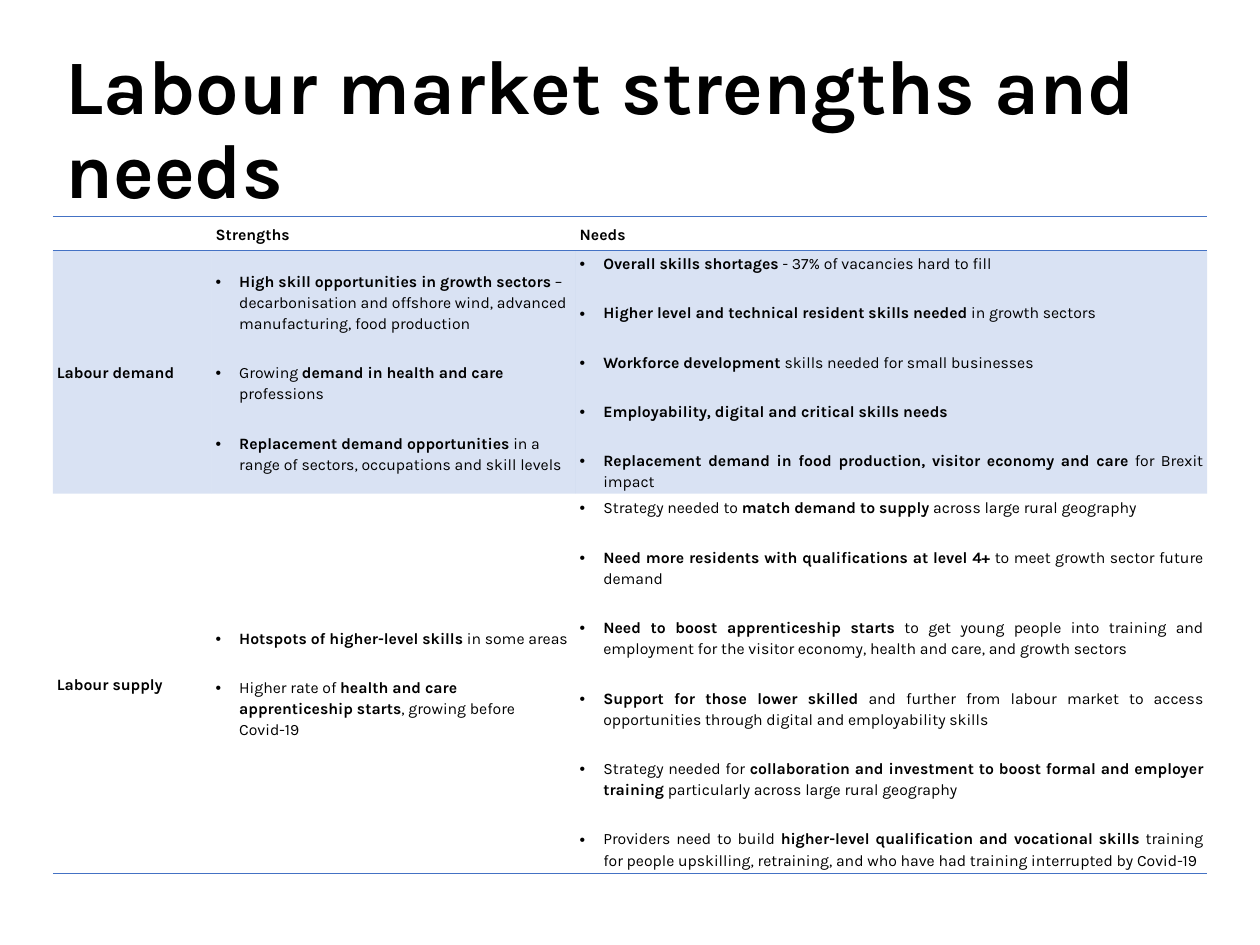
from lxml import etree
from pptx import Presentation
from pptx import util as u
from pptx.dml.color import RGBColor
from pptx.enum import text
from pptx.oxml import parse_xml
from pptx.oxml.ns import nsdecls, qn

BLACK = RGBColor(0x00, 0x00, 0x00)
BLUE = RGBColor(0x44, 0x72, 0xC4)
FONT = "Karla"
NO_STYLE = "{2D5ABB26-0587-4C30-8999-92F81FD0307C}"
COLUMN_WIDTHS = [90.72, 208.08, 360.72]
ROW_HEIGHTS = [19.44, 111.6, 174.96]
INDENT = 13.5
TABS = [64, 78]

# Cell texts by row; ** switches bold on and off
ROWS = [
    [[], ["**Strengths**"], ["**Needs**"]],
    [
        ["**Labour demand**"],
        [
            "**High skill opportunities in growth sectors **– decarbonisation and "
            "offshore wind, advanced manufacturing, food production",
            "Growing **demand in health and care **professions",
            "**Replacement demand opportunities **in a range of sectors, "
            "occupations and skill levels",
        ],
        [
            "**Overall skills shortages **- 37% of vacancies hard to fill",
            "**Higher level and technical resident skills needed **in growth sectors",
            "**Workforce development **skills needed for small businesses",
            "**Employability, digital and critical skills needs**",
            "**Replacement demand in food production, visitor economy and care **"
            "for Brexit impact",
        ],
    ],
    [
        ["**Labour supply**"],
        [
            "**Hotspots of higher-level skills **in some areas",
            "Higher rate of **health and care apprenticeship starts**, "
            "growing before Covid-19",
        ],
        [
            "Strategy needed to **match demand to supply **across large rural geography",
            "**Need more residents with qualifications at level 4+ **to meet growth "
            "sector future demand",
            "**Need to boost apprenticeship starts **to get young people into training "
            "and employment for the visitor economy, health and care, and growth sectors",
            "**Support for those lower skilled **and further from labour market to "
            "access opportunities through digital and employability skills",
            "Strategy needed for **collaboration and investment to boost formal and "
            "employer training** particularly across large rural geography",
            "Providers need to build **higher-level qualification and vocational "
            "skills **training for people upskilling, retraining, and who have had "
            "training interrupted by Covid-19",
        ],
    ],
]


def add_spans(para, marked, size):
    """Add runs to a paragraph, bold between ** marks."""
    for index, part in enumerate(marked.split("**")):
        if part:
            span = para.add_run()
            span.text = part
            span.font.color.rgb = BLACK
            values = {"name": FONT, "size": u.Pt(size), "bold": index % 2 == 1}
            for name, value in values.items():
                setattr(span.font, name, value)


def add_border(cell, side, visible):
    """Draw or clear one cell edge; side is L, R, T or B."""
    paint = (f'<a:solidFill><a:srgbClr val="{BLUE}"/></a:solidFill>'
             if visible else "<a:noFill/>")
    cell._tc.get_or_add_tcPr().append(parse_xml(
        f'<a:ln{side} {nsdecls("a")} w="{u.Pt(1)}">{paint}</a:ln{side}>'))


deck = Presentation()
deck.slide_width, deck.slide_height = u.Pt(720), u.Pt(540)
page = deck.slides.add_slide(deck.slide_layouts[6])

# Title
title = page.shapes.add_textbox(u.Pt(30.24), u.Pt(23.76), u.Pt(660.96), u.Pt(102.96))
title.text_frame.word_wrap = True
title.text_frame.vertical_anchor = text.MSO_ANCHOR.MIDDLE
para = title.text_frame.paragraphs[0]
para.line_spacing = 0.9
add_spans(para, "**Labour market strengths and needs**", 44)

# Table frame
frame = page.shapes.add_table(3, 3, u.Pt(30.24), u.Pt(123.84),
                              u.Pt(sum(COLUMN_WIDTHS)), u.Pt(sum(ROW_HEIGHTS)))
table = frame.table
table.horz_banding = False
table.first_row = False
table._tbl.tblPr.find(qn("a:tableStyleId")).text = NO_STYLE
for column, width in zip(table.columns, COLUMN_WIDTHS):
    column.width = u.Pt(width)
for row, height in zip(table.rows, ROW_HEIGHTS):
    row.height = u.Pt(height)

# Cells
for row_index, row_texts in enumerate(ROWS):
    for column_index, lines in enumerate(row_texts):
        cell = table.cell(row_index, column_index)
        values = {"margin_left": u.Pt(2.25), "margin_right": u.Pt(2.25),
                  "margin_top": 0, "margin_bottom": 0,
                  "vertical_anchor": text.MSO_ANCHOR.MIDDLE}
        for name, value in values.items():
            setattr(cell, name, value)

        # Rules above and below the header and under the last row
        edges = {"L": False, "R": False, "T": row_index < 2, "B": row_index != 1}
        for side, visible in edges.items():
            add_border(cell, side, visible)

        # Tinted band on the demand row
        if row_index == 1:
            cell.fill.solid()
            cell.fill.fore_color.rgb = BLUE
            color = cell._tc.tcPr.find(qn("a:solidFill")).find(qn("a:srgbClr"))
            etree.SubElement(color, qn("a:alpha")).set("val", "20000")
        else:
            cell.fill.background()

        # The empty corner keeps the small text height
        if not lines:
            end = etree.SubElement(cell.text_frame.paragraphs[0]._p, qn("a:endParaRPr"))
            end.set("sz", "900")

        bulleted = row_index > 0 and column_index > 0
        left_aligned = bulleted and column_index == 1
        for index, line in enumerate(lines):
            para = (cell.text_frame.add_paragraph() if index
                    else cell.text_frame.paragraphs[0])
            if bulleted:
                props = para._p.get_or_add_pPr()
                props.set("marL", str(u.Pt(INDENT)))
                props.set("indent", str(-u.Pt(INDENT)))
                etree.SubElement(props, qn("a:buFont")).set("typeface", "Arial")
                etree.SubElement(props, qn("a:buChar")).set("char", "•")
                tabs = etree.SubElement(props, qn("a:tabLst"))
                for stop in TABS:
                    tab = etree.SubElement(tabs, qn("a:tab"))
                    tab.set("pos", str(u.Pt(stop)))
                    tab.set("algn", "l")
            values = {"alignment": text.PP_ALIGN.LEFT if left_aligned
                      else text.PP_ALIGN.JUSTIFY,
                      "line_spacing": 1.15,
                      "space_before": u.Pt(6 if index else 0),
                      "space_after": u.Pt(10)}
            for name, value in values.items():
                setattr(para, name, value)
            add_spans(para, line, 9)

deck.save("out.pptx")
